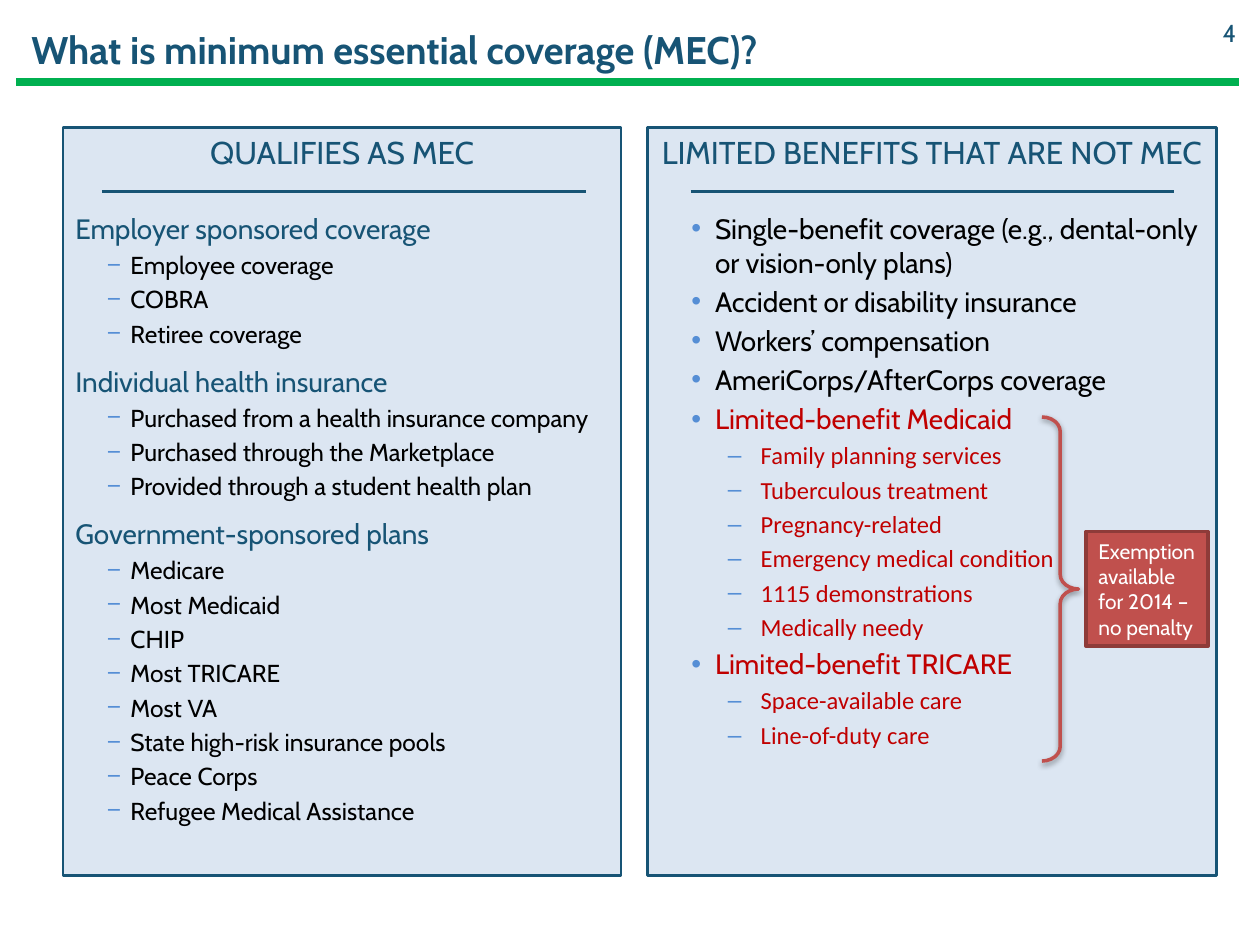
from lxml import etree
from pptx import Presentation
from pptx.dml.color import RGBColor
from pptx.enum.shapes import MSO_CONNECTOR, MSO_SHAPE
from pptx.enum.text import MSO_ANCHOR, PP_ALIGN
from pptx.oxml.ns import qn
from pptx.util import Pt

RECT, BRACE = MSO_SHAPE.RECTANGLE, MSO_SHAPE.RIGHT_BRACE
LINE = MSO_CONNECTOR.STRAIGHT
LEFT, CENTER, RIGHT = PP_ALIGN.LEFT, PP_ALIGN.CENTER, PP_ALIGN.RIGHT
TOP, MIDDLE, BOTTOM = MSO_ANCHOR.TOP, MSO_ANCHOR.MIDDLE, MSO_ANCHOR.BOTTOM
COLORS = {
    "navy": "175475", "green": "00B050", "pale": "DCE6F2", "blue": "558ED5",
    "black": "000000", "red": "C00000", "brick": "C0504D", "rust": "8E3B39",
    "white": "FFFFFF",
}
# Kind of line: size, font, colour, bullet, left margin, hanging indent
STYLES = {
    "group": (16, "Cabin", "navy", None, 0, 0),
    "dash": (14, "Cabin", "black", "−", 31.5, 13.5),
    "dot": (16, "Cabin", "black", "•", 31.5, 13.5),
    "red dot": (16, "Cabin", "red", "•", 31.5, 13.5),
    "red dash": (14, "Calibri", "red", "–", 57.6, 18.7),
}
COVERED = [
    ("group", ["Employer sponsored coverage"]),
    ("dash", ["Employee coverage", "COBRA", "Retiree coverage"]),
    ("group", ["Individual health insurance"]),
    ("dash", ["Purchased from a health insurance company",
              "Purchased through the Marketplace",
              "Provided through a student health plan"]),
    ("group", ["Government-sponsored plans"]),
    ("dash", ["Medicare", "Most Medicaid", "CHIP", "Most TRICARE", "Most VA",
              "State high-risk insurance pools", "Peace Corps",
              "Refugee Medical Assistance"]),
]
LIMITED = [
    ("dot", ["Single-benefit coverage (e.g., dental-only or vision-only plans)",
             "Accident or disability insurance", "Workers’ compensation",
             "AmeriCorps/AfterCorps coverage"]),
    ("red dot", ["Limited-benefit Medicaid"]),
    ("red dash", ["Family planning services", "Tuberculous treatment",
                  "Pregnancy-related", "Emergency medical condition",
                  "1115 demonstrations", "Medically needy"]),
    ("red dot", ["Limited-benefit TRICARE"]),
    ("red dash", ["Space-available care", "Line-of-duty care"]),
]


def rgb(name):
    return RGBColor.from_string(COLORS[name])


def write(para, text, size, font="Cabin", color="navy", align=LEFT, bold=False):
    para.text = text
    para.alignment = align
    face = para.runs[0].font
    face.size, face.name, face.bold = Pt(size), font, bold
    face.color.rgb = rgb(color)


def add_label(slide, box, text, size, anchor, align=LEFT, bold=False):
    frame = slide.shapes.add_textbox(*map(Pt, box)).text_frame
    frame.word_wrap = True
    frame.vertical_anchor = anchor
    write(frame.paragraphs[0], text, size, align=align, bold=bold)


def add_rule(slide, left, right, y, color, width):
    rule = slide.shapes.add_connector(LINE, Pt(left), Pt(y), Pt(right), Pt(y))
    rule.line.color.rgb = rgb(color)
    rule.line.width = Pt(width)
    etree.SubElement(rule._element.spPr, qn("a:effectLst"))


def add_box(slide, box, fill, edge, width, kind=RECT):
    shape = slide.shapes.add_shape(kind, *map(Pt, box))
    shape.shadow.inherit = False
    if fill:
        shape.fill.solid()
        shape.fill.fore_color.rgb = rgb(fill)
    else:
        shape.fill.background()
    shape.line.color.rgb = rgb(edge)
    shape.line.width = Pt(width)
    shape.text_frame.word_wrap = True
    return shape


def set_bullet(para, mark, margin, hang):
    props = para._p.get_or_add_pPr()
    props.set("marL", str(Pt(margin)))
    props.set("indent", str(-Pt(hang)))
    tint = etree.SubElement(props, qn("a:buClr"))
    etree.SubElement(tint, qn("a:srgbClr"), val=COLORS["blue"])
    etree.SubElement(props, qn("a:buFont"), typeface="Arial")
    etree.SubElement(props, qn("a:buChar"), char=mark)


def add_panel(slide, left, width, head, groups):
    """Framed column with a centred heading above grouped lines."""
    shape = add_box(slide, (left, 72.7, width, 427.7), "pale", "navy", 1.5)
    frame = shape.text_frame
    frame.vertical_anchor = TOP
    para = frame.paragraphs[0]
    write(para, head, 18, align=CENTER)
    para.space_after = Pt(19.8)
    for kind, lines in groups:
        size, font, color, mark, margin, hang = STYLES[kind]
        for text in lines:
            para = frame.add_paragraph()
            write(para, text, size, font, color)
            para.space_before = Pt(size * 0.2)
            if kind == "dash" and text == lines[-1]:
                para.space_after = Pt(6)
            if mark:
                set_bullet(para, mark, margin, hang)


def add_brace(slide, box):
    brace = add_box(slide, box, None, "brick", 2, BRACE)
    brace.adjustments[0] = 0.4
    effects = brace._element.spPr.find(qn("a:effectLst"))
    shade = etree.SubElement(effects, qn("a:outerShdw"), blurRad=str(Pt(3.1)),
                             dist=str(Pt(1.6)), dir="5400000", rotWithShape="0")
    tint = etree.SubElement(shade, qn("a:srgbClr"), val=COLORS["black"])
    etree.SubElement(tint, qn("a:alpha"), val="38000")


def add_note(slide, box, text):
    note = add_box(slide, box, "brick", "rust", 2)
    write(note.text_frame.paragraphs[0], text, 12, color="white")


def main():
    deck = Presentation()
    deck.slide_width, deck.slide_height = Pt(720), Pt(540)
    slide = deck.slides.add_slide(deck.slide_layouts[6])

    add_rule(slide, 9.4, 707.8, 46.8, "green", 4.75)
    add_label(slide, (10.8, 7.2, 648, 37.4),
              "What is minimum essential coverage (MEC)?", 22, BOTTOM, bold=True)
    add_label(slide, (676.8, 4.3, 36.7, 28.8), "4", 14, MIDDLE, RIGHT)

    add_panel(slide, 36, 319, "QUALIFIES AS MEC", COVERED)
    add_panel(slide, 370, 325, "LIMITED BENEFITS THAT ARE NOT MEC", LIMITED)
    for left in (58.3, 394.6):
        add_rule(slide, left, left + 276.5, 109.4, "navy", 1.5)

    add_brace(slide, (595.4, 238.3, 20.9, 196.6))
    add_note(slide, (620.6, 303.8, 69.8, 65.5),
             "Exemption available for 2014 – no penalty")
    deck.save("out.pptx")


if __name__ == "__main__":
    main()
